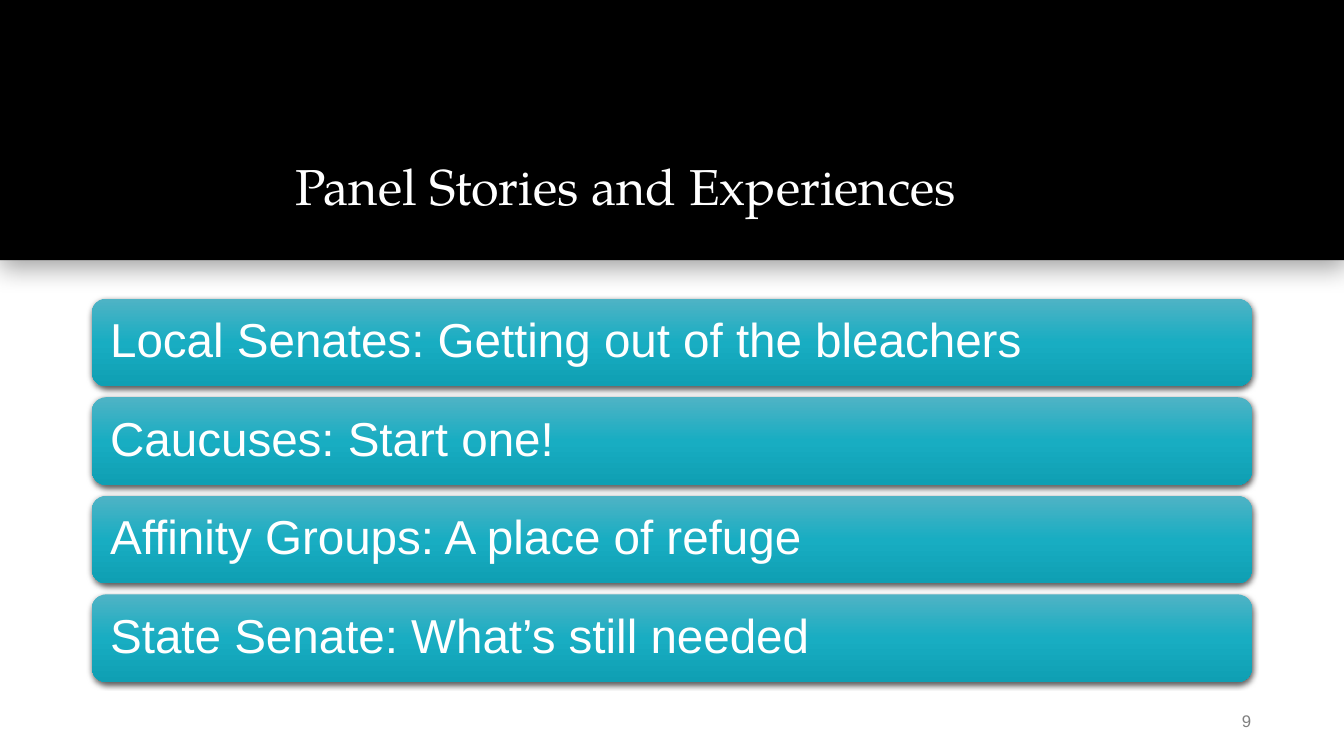
from dataclasses import dataclass

from lxml import etree
from pptx import Presentation
from pptx.dml.color import RGBColor
from pptx.enum.shapes import MSO_SHAPE
from pptx.enum.text import MSO_ANCHOR, MSO_AUTO_SIZE, PP_ALIGN
from pptx.oxml.ns import qn
from pptx.util import Emu, Inches, Pt

RECT, ROUND = MSO_SHAPE.RECTANGLE, MSO_SHAPE.ROUNDED_RECTANGLE
LEFT, RIGHT = PP_ALIGN.LEFT, PP_ALIGN.RIGHT
MIDDLE, BOTTOM = MSO_ANCHOR.MIDDLE, MSO_ANCHOR.BOTTOM

WIDTH, HEIGHT = Inches(13.33), Inches(7.5)
COL, ROW = WIDTH / 100, HEIGHT / 100  # grid of 100 by 100 cells


@dataclass(frozen=True)
class Font:
    name: str
    size: int
    color: str


@dataclass(frozen=True)
class Shade:
    alpha: int
    blur: float
    dist: float


@dataclass(frozen=True)
class Theme:
    black: str = "000000"
    stops: tuple = ((0, "4FB3C5"), (50, "18ADC2"), (100, "0F9FB3"))
    title: Font = Font("TeX Gyre Pagella", 36, "FFFFFF")
    topic: Font = Font("Arial", 34, "FFFFFF")
    number: Font = Font("Arial", 12, "808080")
    band: Shade = Shade(35, 18, 5)
    bar: Shade = Shade(63, 4.5, 1.5)


@dataclass(frozen=True)
class Box:
    """Place on the grid, in columns and rows."""
    x: float
    y: float
    w: float
    h: float

    def emu(self) -> tuple:
        return (Emu(round(self.x * COL)), Emu(round(self.y * ROW)),
                Emu(round(self.w * COL)), Emu(round(self.h * ROW)))


THEME = Theme()
BAND = Box(0, 0, 100, 34.4)
TITLE = Box(21, 5.87, 72.15, 24.53)
NUMBER = Box(85.6, 92.67, 7.5, 5.33)
FIRST = Box(6.83, 39.5, 86.33, 11.6)
PITCH = 13.04
TOPICS = (
    "Local Senates: Getting out of the bleachers",
    "Caucuses: Start one!",
    "Affinity Groups: A place of refuge",
    "State Senate: What’s still needed",
)


def write(shape, text: str, font: Font, anchor, pads: tuple,
          align=LEFT, lead: float = 1.0) -> None:
    frame = shape.text_frame
    frame.text = text
    frame.word_wrap = True
    frame.auto_size = MSO_AUTO_SIZE.NONE
    frame.vertical_anchor = anchor
    (frame.margin_left, frame.margin_top,
     frame.margin_right, frame.margin_bottom) = map(Inches, pads)
    line = frame.paragraphs[0]
    line.alignment, line.line_spacing = align, lead
    face = line.runs[0].font
    face.name, face.size = font.name, Pt(font.size)
    face.color.rgb = RGBColor.from_string(font.color)


def cast(shape, shade: Shade) -> None:
    """Give a shape a soft black shadow straight below it."""
    shape.shadow.inherit = False
    host = shape._element.spPr.find(qn("a:effectLst"))
    drop = etree.SubElement(
        host, qn("a:outerShdw"), blurRad=str(Pt(shade.blur)),
        dist=str(Pt(shade.dist)), dir="5400000", rotWithShape="0")
    tint = etree.SubElement(drop, qn("a:srgbClr"), val=THEME.black)
    etree.SubElement(tint, qn("a:alpha"), val=str(shade.alpha * 1000))


def blend(shape, stops: tuple) -> None:
    """Fill a shape with a gradient from top to bottom."""
    shape.fill.gradient()
    shape.fill.gradient_angle = 270
    host = shape._element.spPr.find(qn("a:gradFill")).find(qn("a:gsLst"))
    for old in list(host):
        host.remove(old)
    for pos, color in stops:
        stop = etree.SubElement(host, qn("a:gs"), pos=str(pos * 1000))
        etree.SubElement(stop, qn("a:srgbClr"), val=color)


def draw_bar(slide, box: Box, text: str) -> None:
    bar = slide.shapes.add_shape(ROUND, *box.emu())
    blend(bar, THEME.stops)
    bar.line.fill.background()
    cast(bar, THEME.bar)
    write(bar, text, THEME.topic, MIDDLE, (0.14, 0.14, 0.14, 0.14), lead=0.9)


def main() -> None:
    deck = Presentation()
    deck.slide_width, deck.slide_height = WIDTH, HEIGHT
    slide = deck.slides.add_slide(deck.slide_layouts[5])

    # Title on its black band
    title = slide.shapes.title
    title.left, title.top, title.width, title.height = TITLE.emu()
    write(title, "Panel Stories and Experiences", THEME.title, BOTTOM,
          (0.13, 0.13, 0.13, 0.13), lead=0.9)
    band = slide.shapes.add_shape(RECT, *BAND.emu())
    band.fill.solid()
    band.fill.fore_color.rgb = RGBColor.from_string(THEME.black)
    band.line.fill.background()
    cast(band, THEME.band)
    title._element.addprevious(band._element)

    # Slide number
    number = slide.shapes.add_textbox(*NUMBER.emu())
    write(number, "9", THEME.number, MIDDLE, (0.1, 0.05, 0, 0.05), RIGHT)

    # Topic bars
    for i, topic in enumerate(TOPICS):
        place = Box(FIRST.x, FIRST.y + i * PITCH, FIRST.w, FIRST.h)
        draw_bar(slide, place, topic)

    deck.save("out.pptx")


if __name__ == "__main__":
    main()
